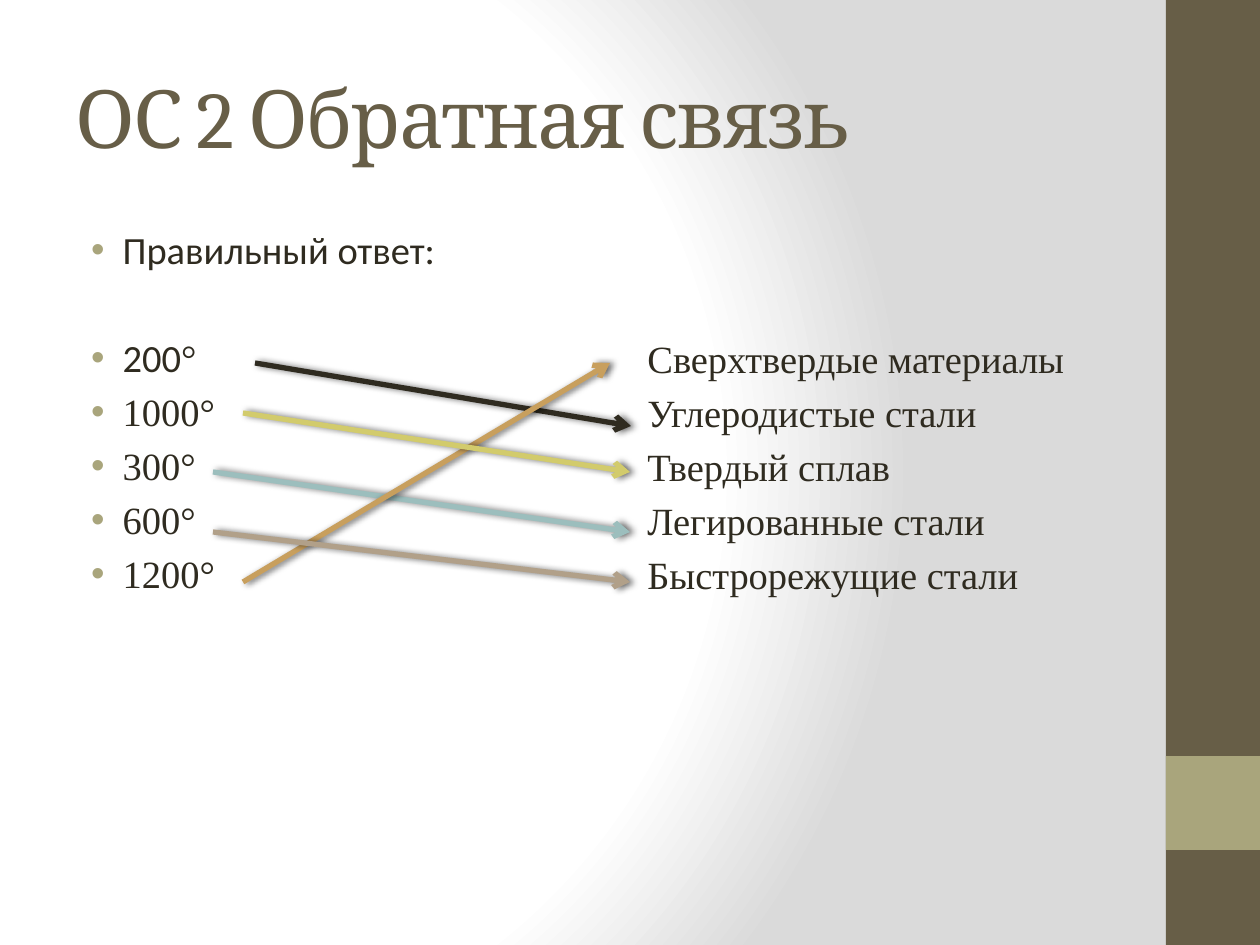
"""Build the feedback slide that matches temperatures with tool materials."""
from pptx import Presentation, util as u
from pptx.dml.color import RGBColor
from pptx.enum import shapes, text
from pptx.oxml import parse_xml
from pptx.oxml.ns import nsdecls, qn

BROWN = RGBColor(0x67, 0x5E, 0x47)
OLIVE = RGBColor(0xA9, 0xA5, 0x7C)
INK = RGBColor(0x2F, 0x2B, 0x20)
TEAL = RGBColor(0x9C, 0xBE, 0xBD)
GOLD = RGBColor(0xC8, 0x9F, 0x5D)
LIME = RGBColor(0xD2, 0xCB, 0x6C)
TAUPE = RGBColor(0xB1, 0xA0, 0x89)
SERIF = "Times New Roman"
NS = nsdecls("a")


def px(*sides):
    return [u.Inches(side / 126) for side in sides]


def write(frame, rows, size, color, bullet=False):
    for row, (gap, runs) in enumerate(rows):
        para = frame.paragraphs[0] if row == 0 else frame.add_paragraph()
        para.space_before = u.Pt(gap)
        for words, face in runs:
            run = para.add_run()
            run.text = words
            for key, val in {"size": u.Pt(size), "name": face}.items():
                setattr(run.font, key, val)
            run.font.color.rgb = color
        if bullet:
            props = para._p.get_or_add_pPr()
            for key, val in {"marL": 342900, "indent": -228600}.items():
                props.set(key, str(val))
            for part in (f'<a:buClr {NS}><a:srgbClr val="{OLIVE}"/></a:buClr>',
                         f'<a:buFont {NS} typeface="Arial"/>',
                         f'<a:buChar {NS} char="•"/>'):
                props.append(parse_xml(part))


deck = Presentation()
deck.slide_width, deck.slide_height = px(1260, 945)
slide = deck.slides.add_slide(deck.slide_layouts[6])

slide.background.fill.solid()
back = slide.element.find(".//" + qn("p:bgPr"))
stops = "".join(f'<a:gs pos="{pos}000"><a:srgbClr val="{tint}"/></a:gs>'
                for pos, tint in ((0, "FFFFFF"), (75, "FFFFFF"), (100, "DADADA")))
back.replace(back[0], parse_xml(
    f'<a:gradFill {NS} rotWithShape="1"><a:gsLst>{stops}</a:gsLst><a:path path="circle">'
    '<a:fillToRect l="20000" t="50000" r="100000" b="50000"/></a:path></a:gradFill>'))

for top, high, color in ((0, 945, BROWN), (756, 94, OLIVE)):
    band = slide.shapes.add_shape(shapes.MSO_SHAPE.RECTANGLE, *px(1166, top, 94, high))
    band.shadow.inherit = False
    band.fill.solid()
    band.fill.fore_color.rgb = color
    band.line.fill.background()

frames = []
for box, anchor in (((63, 37, 1050, 158), text.MSO_ANCHOR.MIDDLE),
                    ((63, 220, 550, 400), text.MSO_ANCHOR.TOP),
                    ((635, 329, 500, 290), text.MSO_ANCHOR.TOP)):
    frame = slide.shapes.add_textbox(*px(*box)).text_frame
    for key, val in {"word_wrap": True, "vertical_anchor": anchor,
                     "auto_size": text.MSO_AUTO_SIZE.NONE}.items():
        setattr(frame, key, val)
    frames.append(frame)
title, left, right = frames

write(title, [(0, [("ОС 2 Обратная связь", "Cambria")])], 46, BROWN)
title.paragraphs[0].runs[0].font._element.set("spc", "-100")

heats = [(0, [("Правильный ответ:", "Calibri")]),
         (35.5, [("200", "Calibri"), ("°", SERIF)])]
heats += [(4.4, [(heat, SERIF)]) for heat in ("1000°", "300°", "600°", "1200°")]
write(left, heats, 22, INK, bullet=True)

goods = ("Сверхтвердые материалы", "Углеродистые стали", "Твердый сплав",
         "Легированные стали", "Быстрорежущие стали")
write(right, [(4.4 if row else 0, [(good, SERIF)]) for row, good in enumerate(goods)], 22, INK)

for ends, color in (((255, 363, 631, 426), INK), ((213, 472, 630, 532), TEAL),
                    ((243, 582, 610, 363), GOLD), ((243, 413, 630, 472), LIME),
                    ((213, 532, 630, 582), TAUPE)):
    link = slide.shapes.add_connector(shapes.MSO_CONNECTOR.STRAIGHT, *px(*ends))
    link.line.color.rgb = color
    link.line.width = u.Pt(3)
    link.line._get_or_add_ln().append(parse_xml(f'<a:tailEnd {NS} type="arrow"/>'))
    link._element.spPr.append(parse_xml(
        f'<a:effectLst {NS}><a:outerShdw blurRad="50800" dist="25400" dir="0">'
        '<a:srgbClr val="000000"><a:alpha val="60000"/></a:srgbClr></a:outerShdw></a:effectLst>'))

deck.save("out.pptx")
